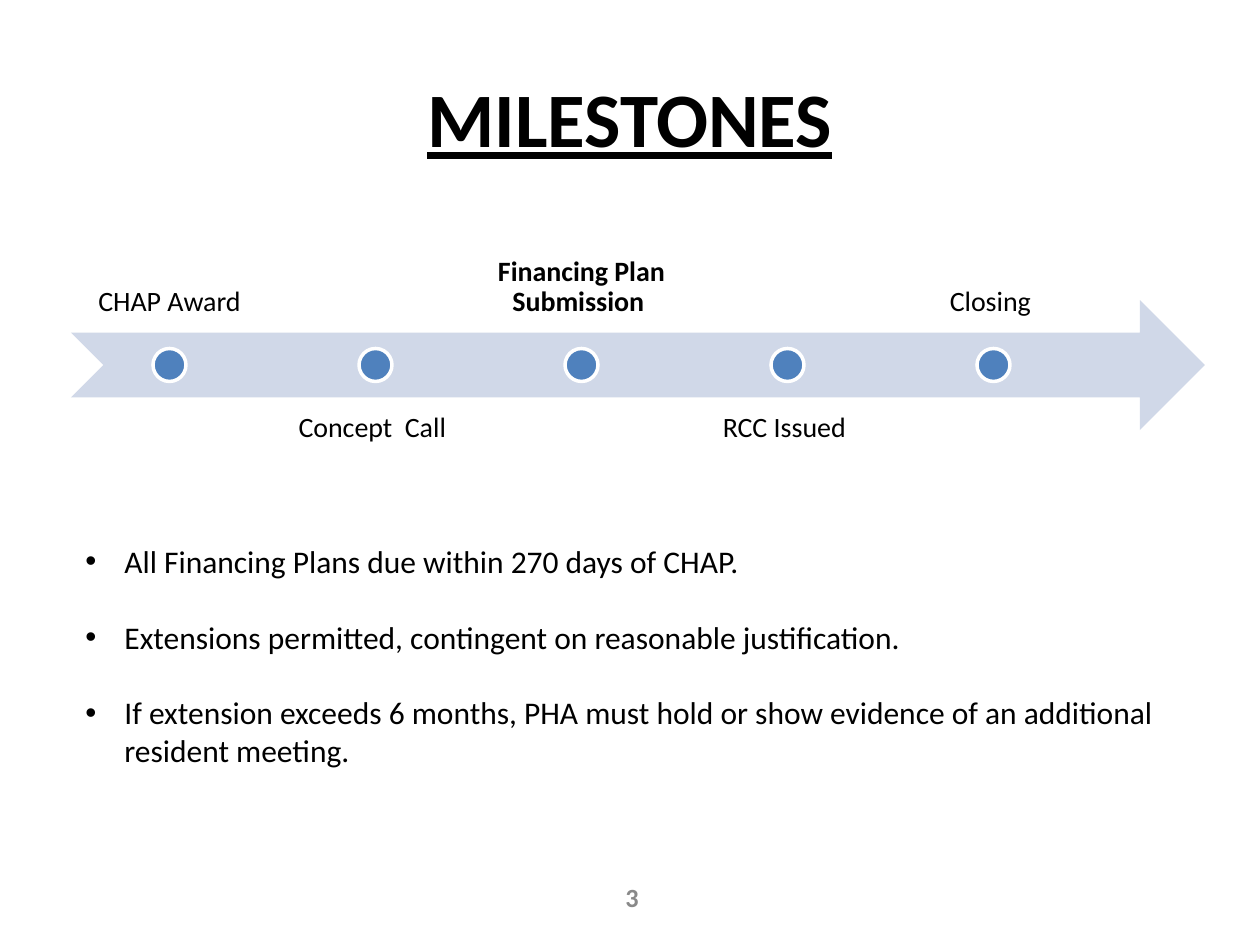
from pptx import Presentation
from pptx.dml.color import RGBColor
from pptx.enum.shapes import MSO_SHAPE as SHAPE
from pptx.enum.text import MSO_ANCHOR as ANCHOR, PP_ALIGN as ALIGN
from pptx.util import Emu, Pt
from lxml import etree

TITLE = "MILESTONES"
PAGE = "3"
# (label, bold); labels alternate above and below the arrow
MILESTONES = [
    ("CHAP Award", False),
    ("Concept  Call ", False),
    ("Financing Plan Submission ", True),
    ("RCC Issued ", False),
    ("Closing ", False),
]
NOTES = [
    "All Financing Plans due within 270 days of CHAP.",
    "Extensions permitted, contingent on reasonable justification.",
    "If extension exceeds 6 months, PHA must hold or show evidence of "
    "an additional resident meeting.",
]
BLACK, WHITE, GREY = "000000", "FFFFFF", "898989"
BAND, DOT = "D0D8E8", "4F81BD"

# Timeline geometry in px
ARROW_X, ARROW_Y, ARROW_W, ARROW_H = 71, 300, 1134, 130
LABEL_W, STEP, DOT_SIZE = 197, 206, 33
ABOVE_Y, BELOW_Y = 203, 398


def px(n):
    return Emu(round(n * 914400 / 126))


def rgb(color):
    return RGBColor.from_string(color)


def add_box(x, y, w, h, anchor=ANCHOR.TOP, inset=None):
    tf = slide.shapes.add_textbox(px(x), px(y), px(w), px(h)).text_frame
    tf.word_wrap = True
    tf.vertical_anchor = anchor
    if inset is not None:
        tf.margin_left = tf.margin_right = px(inset)
        tf.margin_top = tf.margin_bottom = px(inset)
    return tf


def add_run(p, text, size, color=BLACK, bold=False, underline=False):
    r = p.add_run()
    r.text = text
    r.font.name = "Calibri"
    r.font.size = Pt(size)
    r.font.color.rgb = rgb(color)
    r.font.bold = bold
    r.font.underline = underline


def add_shape(kind, x, y, w, h, fill, line=None):
    sp = slide.shapes.add_shape(kind, px(x), px(y), px(w), px(h))
    sp.shadow.inherit = False
    sp.fill.solid()
    sp.fill.fore_color.rgb = rgb(fill)
    if line:
        sp.line.color.rgb = rgb(line)
        sp.line.width = Pt(2)
    else:
        sp.line.fill.background()


def add_bullet(p, indent):
    pPr = p._p.get_or_add_pPr()
    pPr.set("marL", str(px(indent)))
    pPr.set("indent", str(-px(indent)))
    ns = pPr.nsmap["a"]
    etree.SubElement(pPr, f"{{{ns}}}buFont", typeface="Arial")
    etree.SubElement(pPr, f"{{{ns}}}buChar", char="•")


prs = Presentation()
prs.slide_width, prs.slide_height = px(1260), px(945)
slide = prs.slides.add_slide(prs.slide_layouts[6])

# Title
p = add_box(63, 38, 1134, 158, ANCHOR.MIDDLE).paragraphs[0]
p.alignment = ALIGN.CENTER
add_run(p, TITLE, 44, bold=True, underline=True)

# Timeline: arrow, labels and dots
add_shape(SHAPE.NOTCHED_RIGHT_ARROW, ARROW_X, ARROW_Y, ARROW_W, ARROW_H, BAND)
for i, (label, bold) in enumerate(MILESTONES):
    x = ARROW_X + i * STEP
    above = i % 2 == 0
    tf = add_box(x, ABOVE_Y if above else BELOW_Y, LABEL_W, ARROW_H,
                 ANCHOR.BOTTOM if above else ANCHOR.TOP, inset=15)
    p = tf.paragraphs[0]
    p.alignment = ALIGN.CENTER
    p.line_spacing = 0.9
    add_run(p, label, 16, bold=bold)
    add_shape(SHAPE.OVAL, x + (LABEL_W - DOT_SIZE) / 2,
              ARROW_Y + (ARROW_H - DOT_SIZE) / 2, DOT_SIZE, DOT_SIZE, DOT, WHITE)

# Page number
p = add_box(598, 872, 53, 50, ANCHOR.MIDDLE).paragraphs[0]
p.alignment = ALIGN.RIGHT
add_run(p, PAGE, 15, GREY, bold=True)

# Bulleted notes
tf = add_box(73, 536, 1103, 280)
for i, note in enumerate(NOTES):
    p = tf.add_paragraph() if i else tf.paragraphs[0]
    if i:
        p.space_before = Pt(21.6)
    add_bullet(p, 39)
    add_run(p, note, 18)

prs.save("out.pptx")
